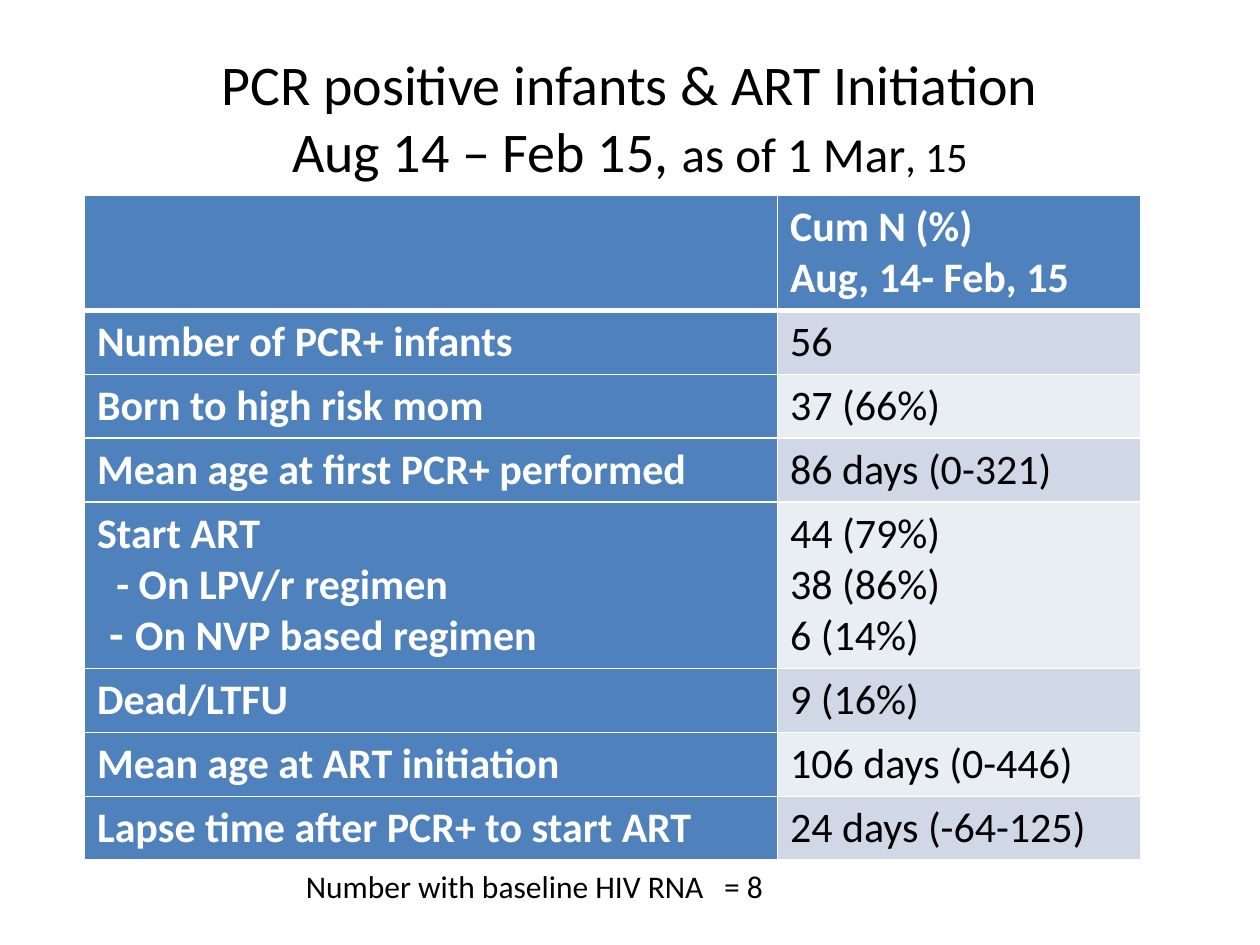
import pptx
import pptx.dml.color
import pptx.enum.text
import pptx.oxml.ns
import pptx.util
from lxml import etree

Pt = pptx.util.Pt
ANCHOR = pptx.enum.text.MSO_ANCHOR
ALIGN = pptx.enum.text.PP_ALIGN
COLORS = {"text": "000000", "white": "FFFFFF", "label": "4F81BD", "odd": "D0D8E8", "even": "E9EDF4"}
TEXT_SIZE = 24
LINE_HEIGHT = 29.25
CELL_PADDING = 7.2
COLUMN_WIDTHS = (396, 207.36)
HEADER = ([], ["Cum N (%)", "Aug, 14- Feb, 15"])
ROWS = [
    (["Number of PCR+ infants"], ["56"]),
    (["Born to high risk mom"], ["37 (66%)"]),
    (["Mean age at first PCR+ performed"], ["86 days (0-321)"]),
    (["Start ART", "- On LPV/r regimen", "- On NVP based regimen"],
     ["44 (79%)", "38 (86%)", "6 (14%)"]),
    (["Dead/LTFU"], ["9 (16%)"]),
    (["Mean age at ART initiation"], ["106 days (0-446)"]),
    (["Lapse time after PCR+ to start ART"], ["24 days (-64-125)"]),
]
INDENTS = {"- On LPV/r regimen": 11, "- On NVP based regimen": 6.5}
DASH_FONTS = {"- On NVP based regimen": "Roboto"}


def rgb(name):
    return pptx.dml.color.RGBColor.from_string(COLORS[name])


def add_text(para, text, size=TEXT_SIZE, color="text", bold=False, font="Calibri"):
    span = para.add_run()
    span.text = text
    span.font.size = Pt(size)
    span.font.bold = bold
    span.font.name = font
    span.font.color.rgb = rgb(color)


def set_borders(cell, bottom):
    properties = cell._tc.get_or_add_tcPr()
    for side, width in (("L", 1), ("R", 1), ("T", 1), ("B", bottom)):
        line = etree.SubElement(properties, pptx.oxml.ns.qn(f"a:ln{side}"), w=str(Pt(width)))
        fill = etree.SubElement(line, pptx.oxml.ns.qn("a:solidFill"))
        etree.SubElement(fill, pptx.oxml.ns.qn("a:srgbClr"), val=COLORS["white"])


def fill_cell(cell, lines, fill, color, bold, bottom):
    set_borders(cell, bottom)
    cell.fill.solid()
    cell.fill.fore_color.rgb = rgb(fill)
    frame = cell.text_frame
    for index, line in enumerate(lines):
        para = frame.add_paragraph() if index else frame.paragraphs[0]
        if line in INDENTS:
            para._p.get_or_add_pPr().set("marL", str(Pt(INDENTS[line])))
        if line in DASH_FONTS:
            add_text(para, line[:2], color=color, bold=bold, font=DASH_FONTS[line])
            line = line[2:]
        add_text(para, line, color=color, bold=bold)


def add_title(page, left, top, width, height):
    box = page.shapes.add_textbox(Pt(left), Pt(top), Pt(width), Pt(height))
    box.text_frame.word_wrap = True
    box.text_frame.vertical_anchor = ANCHOR.MIDDLE
    para = box.text_frame.paragraphs[0]
    para.alignment = ALIGN.CENTER
    add_text(para, "PCR positive infants & ART Initiation", size=32)
    para.add_line_break()
    add_text(para, "Aug 14 – Feb 15, ", size=32)
    add_text(para, "as of 1 Mar", size=28)
    add_text(para, ", 15", size=24)


def add_results(page, left, top, widths):
    rows = [HEADER, *ROWS]
    heights = [LINE_HEIGHT * len(values) + CELL_PADDING for _, values in rows]
    table = page.shapes.add_table(
        len(rows), len(widths), Pt(left), Pt(top), Pt(sum(widths)), Pt(sum(heights))
    ).table
    table.first_col = True
    for column, width in zip(table.columns, widths):
        column.width = Pt(width)
    for index, (labels, values) in enumerate(rows):
        table.rows[index].height = Pt(heights[index])
        header = index == 0
        bottom = 3 if header else 1
        label_cell, value_cell = table.cell(index, 0), table.cell(index, 1)
        fill_cell(label_cell, labels, "label", "white", True, bottom)
        if header:
            fill_cell(value_cell, values, "label", "white", True, bottom)
            value_cell.vertical_anchor = ANCHOR.MIDDLE
        else:
            fill_cell(value_cell, values, "odd" if index % 2 else "even", "text", False, bottom)


def add_footnote(page, left, top, width, height):
    box = page.shapes.add_textbox(Pt(left), Pt(top), Pt(width), Pt(height))
    box.text_frame.word_wrap = False
    box.text_frame.auto_size = pptx.enum.text.MSO_AUTO_SIZE.SHAPE_TO_FIT_TEXT
    para = box.text_frame.paragraphs[0]
    stops = etree.SubElement(para._p.get_or_add_pPr(), pptx.oxml.ns.qn("a:tabLst"))
    etree.SubElement(stops, pptx.oxml.ns.qn("a:tab"), pos=str(Pt(239)), algn="l")
    add_text(para, "Number with baseline HIV RNA\t= 8", size=18)


def main():
    deck = pptx.Presentation()
    deck.slide_width, deck.slide_height = Pt(720), Pt(540)
    page = deck.slides.add_slide(deck.slide_layouts[6])
    add_results(page, 48.24, 111.6, COLUMN_WIDTHS)
    add_title(page, 36, 21.6, 648, 90)
    add_footnote(page, 167.76, 491.76, 283.68, 28.8)
    deck.save("out.pptx")


if __name__ == "__main__":
    main()
